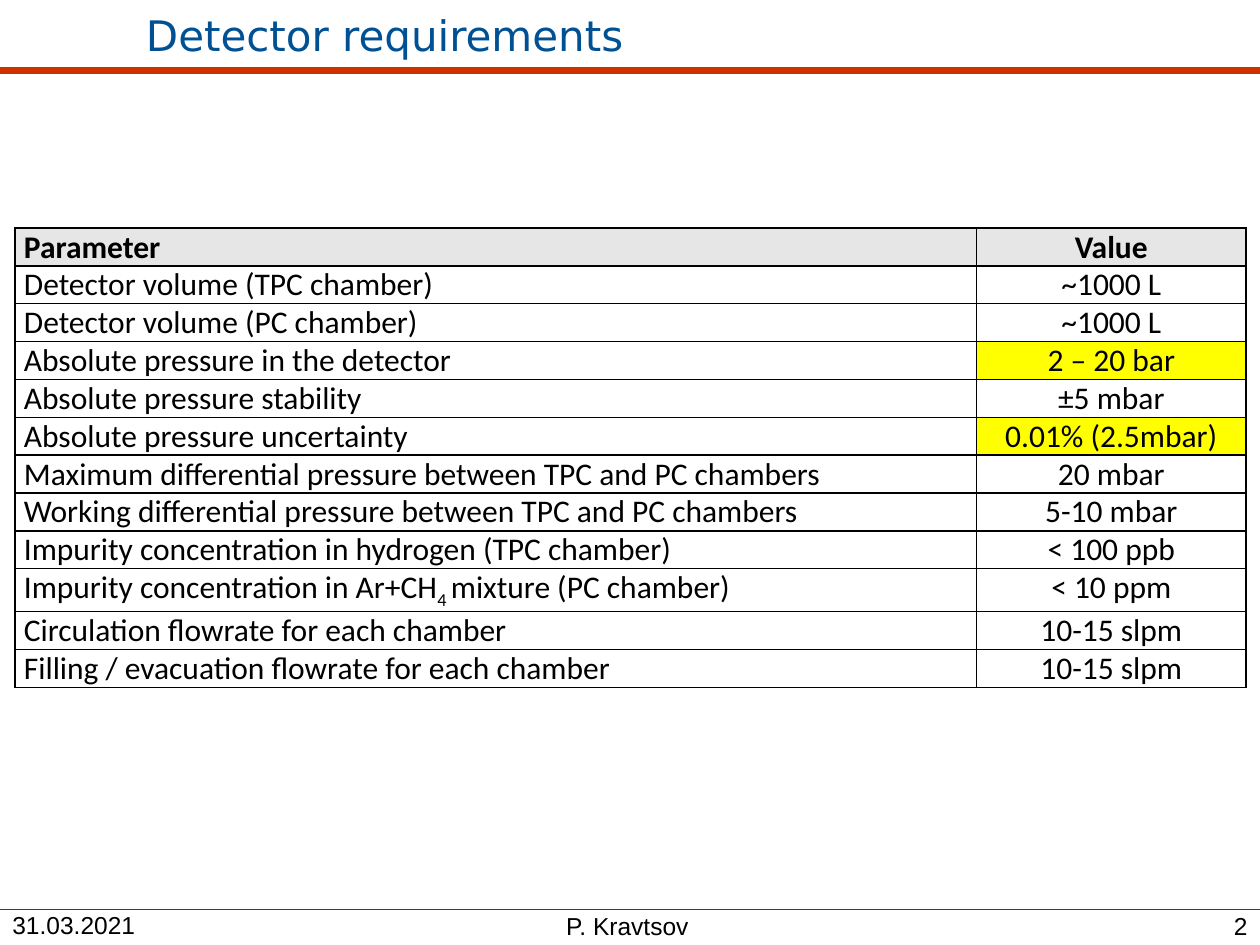
"""Build the detector requirements slide with its parameter table."""
from dataclasses import dataclass

import lxml.etree
import pptx
import pptx.dml.color
import pptx.enum.shapes
import pptx.enum.text
import pptx.oxml.ns
import pptx.util

Align = pptx.enum.text.PP_ALIGN
Anchor = pptx.enum.text.MSO_ANCHOR
COLUMNS, ROWS = 100, 75


@dataclass(frozen=True)
class Theme:
    black: str = "000000"
    title: str = "005194"
    title_rule: str = "CC3300"
    footer_rule: str = "CC0000"
    header: str = "E7E6E6"
    highlight: str = "FFFF00"
    title_font: str = "DejaVu Sans"
    footer_font: str = "Arial"
    table_font: str = "Calibri"
    title_size: float = 24
    footer_size: float = 14
    table_size: float = 18
    border_width: float = 1


@dataclass(frozen=True)
class Rule:
    row: float
    color: str
    width: float


@dataclass(frozen=True)
class Label:
    text: str
    left: float
    top: float
    width: float
    height: float
    align: Align
    anchor: Anchor
    font: str
    size: float
    color: str


@dataclass(frozen=True)
class Requirement:
    parameter: tuple[str, ...]
    value: str
    highlighted: bool = False


THEME = Theme()
FOOTER_STYLE = (Anchor.BOTTOM, THEME.footer_font, THEME.footer_size, THEME.black)
RULES = (
    Rule(72.2, THEME.footer_rule, 0.25),
    Rule(5.6, THEME.title_rule, 4.5),
)
LABELS = (
    Label("Detector requirements", 10.6, 0.1, 88.9, 5.3, Align.LEFT,
          Anchor.MIDDLE, THEME.title_font, THEME.title_size, THEME.title),
    Label("P. Kravtsov", 31.1, 72.5, 37.4, 2.5, Align.CENTER, *FOOTER_STYLE),
    Label("31.03.2021", 0, 72.6, 16, 2.4, Align.LEFT, *FOOTER_STYLE),
    Label("2", 76.7, 71.8, 23.3, 3.2, Align.RIGHT, *FOOTER_STYLE),
)
REQUIREMENTS = (
    Requirement(("Parameter",), "Value"),
    Requirement(("Detector volume (TPC chamber)",), "~1000 L"),
    Requirement(("Detector volume (PC chamber)",), "~1000 L"),
    Requirement(("Absolute pressure in the detector",), "2 – 20 bar", True),
    Requirement(("Absolute pressure stability",), "±5 mbar"),
    Requirement(("Absolute pressure uncertainty",), "0.01% (2.5mbar)", True),
    Requirement(("Maximum differential pressure between TPC and PC chambers",), "20 mbar"),
    Requirement(("Working differential pressure between TPC and PC chambers",), "5-10 mbar"),
    Requirement(("Impurity concentration in hydrogen (TPC chamber)",), "< 100 ppb"),
    Requirement(("Impurity concentration in Ar+CH", "4 ", "mixture (PC chamber)"), "< 10 ppm"),
    Requirement(("Circulation flowrate for each chamber",), "10-15 slpm"),
    Requirement(("Filling / evacuation flowrate for each chamber",), "10-15 slpm"),
)
TABLE_LEFT, TABLE_TOP = 1.2, 18.1
TABLE_COLUMNS = (76.3, 21.4)
TABLE_ROW = 3


def grid(cells: float) -> int:
    return pptx.util.Inches(cells * 10 / COLUMNS)


def rgb(color: str) -> pptx.dml.color.RGBColor:
    return pptx.dml.color.RGBColor.from_string(color)


def style_font(paragraph, name: str, size: float, color: str, bold: bool = False) -> None:
    paragraph.font.name = name
    paragraph.font.size = pptx.util.Pt(size)
    paragraph.font.bold = bold
    paragraph.font.color.rgb = rgb(color)


def draw_rule(slide, rule: Rule) -> None:
    connector = slide.shapes.add_connector(
        pptx.enum.shapes.MSO_CONNECTOR.STRAIGHT,
        0, grid(rule.row), grid(COLUMNS), grid(rule.row))
    connector.line.color.rgb = rgb(rule.color)
    connector.line.width = pptx.util.Pt(rule.width)
    properties = connector._element.spPr
    lxml.etree.SubElement(properties, pptx.oxml.ns.qn("a:effectLst"))


def draw_label(slide, label: Label) -> None:
    box = slide.shapes.add_textbox(
        grid(label.left), grid(label.top), grid(label.width), grid(label.height))
    frame = box.text_frame
    frame.word_wrap = True
    frame.vertical_anchor = label.anchor
    frame.margin_bottom = grid(0.4)
    paragraph = frame.paragraphs[0]
    paragraph.text = label.text
    paragraph.alignment = label.align
    style_font(paragraph, label.font, label.size, label.color)


def add_borders(cell) -> None:
    properties = cell._tc.get_or_add_tcPr()
    qn = pptx.oxml.ns.qn
    for side in ("a:lnL", "a:lnR", "a:lnT", "a:lnB"):
        border = lxml.etree.SubElement(
            properties, qn(side), w=str(pptx.util.Pt(THEME.border_width)))
        fill = lxml.etree.SubElement(border, qn("a:solidFill"))
        lxml.etree.SubElement(fill, qn("a:srgbClr"), val=THEME.black)


def fill_cell(cell, parts: tuple[str, ...], align: Align, bold: bool,
              color: str | None) -> None:
    cell.margin_left = cell.margin_right = grid(0.7)
    cell.margin_top = cell.margin_bottom = 0
    add_borders(cell)
    if color:
        cell.fill.solid()
        cell.fill.fore_color.rgb = rgb(color)
    else:
        cell.fill.background()
    paragraph = cell.text_frame.paragraphs[0]
    paragraph.alignment = align
    style_font(paragraph, THEME.table_font, THEME.table_size, THEME.black, bold)
    for index, part in enumerate(parts):
        run = paragraph.add_run()
        run.text = part
        if index % 2:
            run._r.get_or_add_rPr().set("baseline", "-25000")


def draw_table(slide, requirements: tuple[Requirement, ...]) -> None:
    table = slide.shapes.add_table(
        len(requirements), len(TABLE_COLUMNS), grid(TABLE_LEFT), grid(TABLE_TOP),
        grid(sum(TABLE_COLUMNS)), grid(TABLE_ROW * len(requirements))).table
    table.first_row = table.horz_banding = False
    for column, width in zip(table.columns, TABLE_COLUMNS):
        column.width = grid(width)
    for index, requirement in enumerate(requirements):
        is_header = index == 0
        header_color = THEME.header if is_header else None
        value_color = THEME.highlight if requirement.highlighted else header_color
        fill_cell(table.cell(index, 0), requirement.parameter, Align.JUSTIFY,
                  is_header, header_color)
        fill_cell(table.cell(index, 1), (requirement.value,), Align.CENTER,
                  is_header, value_color)


def main() -> None:
    presentation = pptx.Presentation()
    presentation.slide_width = grid(COLUMNS)
    presentation.slide_height = grid(ROWS)
    slide = presentation.slides.add_slide(presentation.slide_layouts[6])
    for rule in RULES:
        draw_rule(slide, rule)
    for label in LABELS:
        draw_label(slide, label)
    draw_table(slide, REQUIREMENTS)
    presentation.save("out.pptx")


if __name__ == "__main__":
    main()
